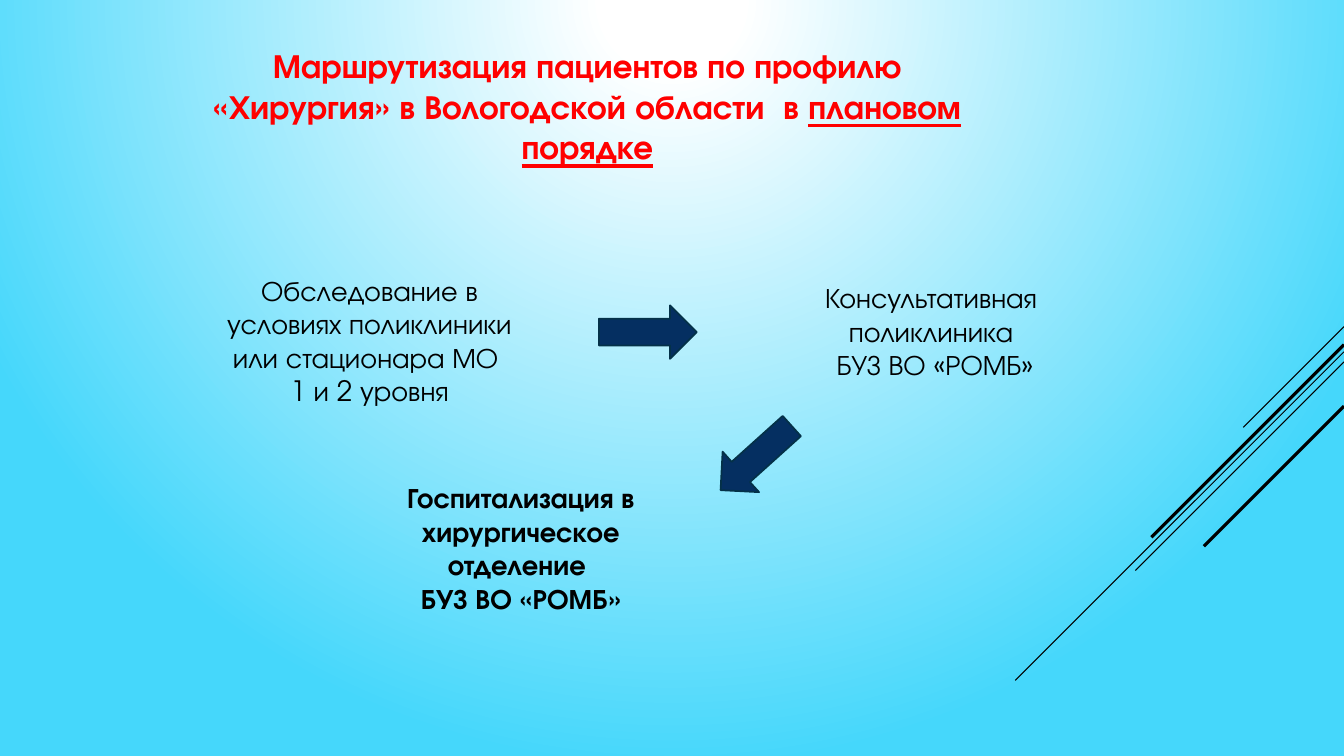
"""Builds the slide on planned routing of surgical patients."""
import dataclasses
import typing

import pptx
import pptx.dml.color
import pptx.enum.shapes
import pptx.enum.text
import pptx.oxml
import pptx.oxml.ns
import pptx.slide
import pptx.util

Inches = pptx.util.Inches
Pt = pptx.util.Pt
Rgb = pptx.dml.color.RGBColor
Geometry = pptx.enum.shapes.MSO_SHAPE
Anchor = pptx.enum.text.MSO_ANCHOR


@dataclasses.dataclass(frozen=True)
class Theme:
    font: str = "TeX Gyre Adventor"
    title_size: float = 24
    step_size: float = 20
    title: str = "FF0000"
    ink: str = "000000"
    arrow: str = "052F61"
    arrow_edge: str = "043148"
    glow: str = "FFFFFF"
    sky: str = "45D7FB"


THEME = Theme()


class Box(typing.NamedTuple):
    left: float
    top: float
    width: float
    height: float

    def lengths(self) -> list[int]:
        return [Inches(value) for value in self]


class Phrase(typing.NamedTuple):
    text: str
    underline: bool = False


@dataclasses.dataclass(frozen=True)
class Label:
    box: Box
    paragraphs: list[list[Phrase]]
    bold: bool = False
    size: float = THEME.step_size
    color: str = THEME.ink
    anchor: Anchor = Anchor.MIDDLE


class Arrow(typing.NamedTuple):
    box: Box
    geometry: Geometry
    rotation: float = 0


class Stripe(typing.NamedTuple):
    top: float
    run: float
    weight: float


SLIDE_WIDTH, SLIDE_HEIGHT = 13.33, 7.5
HOSPITAL = "БУЗ ВО «РОМБ»"

STRIPES = [
    Stripe(3.24, 1, 0.75),
    Stripe(3.49, 3.26, 0.75),
    Stripe(3.59, 2.07, 0.75),
    Stripe(3.42, 1.91, 2.25),
    Stripe(4.03, 1.39, 2.25),
]

LABELS = [
    Label(
        Box(2, 0.4, 7.65, 1.31),
        [[
            Phrase("Маршрутизация пациентов по профилю «Хирургия» в Вологодской области  в "),
            Phrase("плановом порядке", underline=True),
        ]],
        bold=True,
        size=THEME.title_size,
        color=THEME.title,
        anchor=Anchor.TOP,
    ),
    Label(
        Box(2, 2.65, 3.33, 1.45),
        [
            [Phrase("Обследование в условиях поликлиники или стационара МО ")],
            [Phrase("1 и 2 уровня")],
        ],
    ),
    Label(
        Box(7.52, 2.73, 3.43, 1.11),
        [[Phrase("Консультативная поликлиника")], [Phrase(f" {HOSPITAL}")]],
    ),
    Label(
        Box(3.42, 4.71, 3.49, 1.45),
        [
            [Phrase("Госпитализация в хирургическое отделение ")],
            [Phrase(HOSPITAL)],
        ],
        bold=True,
    ),
]

ARROWS = [
    Arrow(Box(5.94, 3.03, 0.97, 0.53), Geometry.RIGHT_ARROW),
    Arrow(Box(7.23, 4.07, 0.54, 0.95), Geometry.DOWN_ARROW, 48),
]


def paint_background(slide: pptx.slide.Slide) -> None:
    background = pptx.oxml.parse_xml(
        f'<p:bg {pptx.oxml.ns.nsdecls("p", "a")}><p:bgPr><a:gradFill rotWithShape="1"><a:gsLst>'
        f'<a:gs pos="9000"><a:srgbClr val="{THEME.glow}"/></a:gs>'
        f'<a:gs pos="100000"><a:srgbClr val="{THEME.sky}"/></a:gs></a:gsLst>'
        '<a:path path="circle"><a:fillToRect l="0" t="0" r="0" b="100000"/></a:path>'
        "</a:gradFill><a:effectLst/></p:bgPr></p:bg>"
    )
    slide.element.cSld.insert(0, background)


def draw_stripe(slide: pptx.slide.Slide, stripe: Stripe) -> None:
    diagonal = slide.shapes.add_connector(
        pptx.enum.shapes.MSO_CONNECTOR.STRAIGHT,
        Inches(SLIDE_WIDTH),
        Inches(stripe.top),
        Inches(SLIDE_WIDTH - stripe.run),
        Inches(stripe.top + stripe.run),
    )
    diagonal.line.color.rgb = Rgb.from_string(THEME.ink)
    diagonal.line.width = Pt(stripe.weight)
    diagonal.element.spPr.append(
        pptx.oxml.parse_xml(f'<a:effectLst {pptx.oxml.ns.nsdecls("a")}/>')
    )


def draw_label(slide: pptx.slide.Slide, label: Label) -> None:
    frame = slide.shapes.add_textbox(*label.box.lengths()).text_frame
    frame.word_wrap = True
    frame.auto_size = pptx.enum.text.MSO_AUTO_SIZE.SHAPE_TO_FIT_TEXT
    frame.vertical_anchor = label.anchor
    for index, phrases in enumerate(label.paragraphs):
        paragraph = frame.add_paragraph() if index else frame.paragraphs[0]
        paragraph.alignment = pptx.enum.text.PP_ALIGN.CENTER
        for phrase in phrases:
            run = paragraph.add_run()
            run.text = phrase.text
            run.font.name = THEME.font
            run.font.size = Pt(label.size)
            run.font.bold = label.bold
            run.font.underline = phrase.underline
            run.font.color.rgb = Rgb.from_string(label.color)


def draw_arrow(slide: pptx.slide.Slide, arrow: Arrow) -> None:
    pointer = slide.shapes.add_shape(arrow.geometry, *arrow.box.lengths())
    pointer.rotation = arrow.rotation
    pointer.shadow.inherit = False
    pointer.fill.solid()
    pointer.fill.fore_color.rgb = Rgb.from_string(THEME.arrow)
    pointer.line.color.rgb = Rgb.from_string(THEME.arrow_edge)
    pointer.line.width = Pt(1.25)


def main() -> None:
    presentation = pptx.Presentation()
    presentation.slide_width = Inches(SLIDE_WIDTH)
    presentation.slide_height = Inches(SLIDE_HEIGHT)
    slide = presentation.slides.add_slide(presentation.slide_layouts[6])
    paint_background(slide)
    for stripe in STRIPES:
        draw_stripe(slide, stripe)
    for label in LABELS:
        draw_label(slide, label)
    for arrow in ARROWS:
        draw_arrow(slide, arrow)
    presentation.save("out.pptx")


if __name__ == "__main__":
    main()
